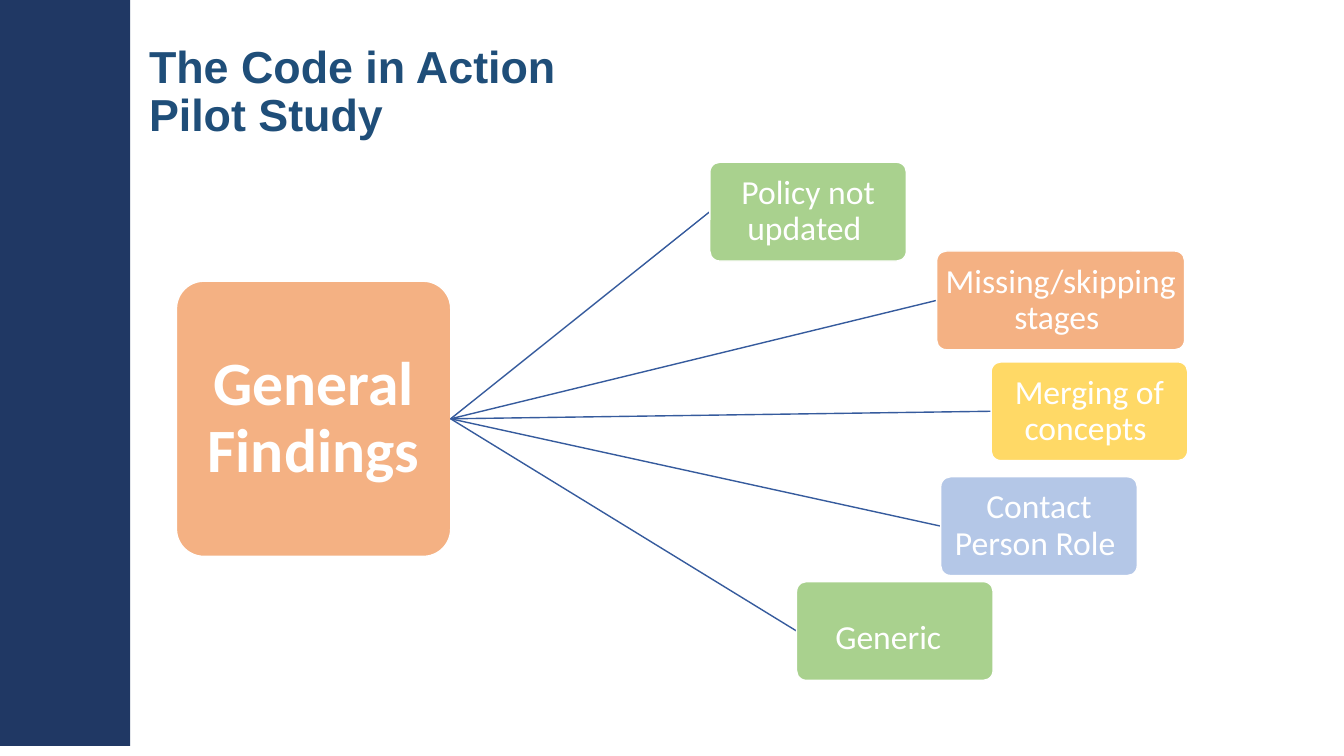
from lxml.etree import SubElement
from pptx import Presentation
from pptx.dml.color import RGBColor
from pptx.enum.shapes import MSO_CONNECTOR, MSO_SHAPE
from pptx.enum.text import MSO_ANCHOR, PP_ALIGN
from pptx.oxml.ns import qn
from pptx.util import Inches, Pt


def tint(code):
    return RGBColor.from_string(code)


class Page:
    navy, ink, line, white = "203864", "1F4E79", "365B9D", "FFFFFF"

    def __init__(self, deck):
        self.slide = deck.slides.add_slide(deck.slide_layouts[6])
        self.shapes = self.slide.shapes

    def add_text(self, part, text, size, font, color, bold=False):
        run = part.add_run()
        run.text = text
        run.font.size = Pt(size)
        run.font.name = font
        run.font.bold = bold
        run.font.color.rgb = tint(color)

    def band(self, *area):
        band = self.shapes.add_shape(MSO_SHAPE.RECTANGLE, *map(Inches, area))
        band.shadow.inherit = False
        band.fill.solid()
        band.fill.fore_color.rgb = tint(self.navy)
        band.line.fill.background()

    def title(self, lines, *area):
        frame = self.shapes.add_textbox(*map(Inches, area)).text_frame
        frame.word_wrap = True
        frame.vertical_anchor = MSO_ANCHOR.MIDDLE
        part = frame.paragraphs[0]
        part.line_spacing = 0.9
        for row, text in enumerate(lines):
            if row:
                part.add_line_break()
            self.add_text(part, text, 32, "Arial", self.ink, True)

    def card(self, runs, fill, area, inset=0.02, bold=False):
        card = self.shapes.add_shape(MSO_SHAPE.ROUNDED_RECTANGLE, *map(Inches, area))
        card.adjustments[0] = 0.1
        card.shadow.inherit = False
        card.fill.solid()
        card.fill.fore_color.rgb = tint(fill)
        card.line.color.rgb = tint(self.white)
        card.line.width = Pt(1)
        frame = card.text_frame
        frame.word_wrap = True
        frame.vertical_anchor = MSO_ANCHOR.MIDDLE
        frame.margin_left = frame.margin_right = Inches(inset)
        frame.margin_top = frame.margin_bottom = Inches(inset)
        part = frame.paragraphs[0]
        part.alignment = PP_ALIGN.CENTER
        part.line_spacing = 0.9
        for text, size in runs:
            self.add_text(part, text, size, "Calibri", self.white, bold)

    def link(self, *ends):
        link = self.shapes.add_connector(MSO_CONNECTOR.STRAIGHT, *map(Inches, ends))
        link.line.color.rgb = tint(self.line)
        link.line.width = Pt(1)
        SubElement(link._element.spPr, qn("a:effectLst"))


def main():
    deck = Presentation()
    deck.slide_width, deck.slide_height = Inches(13.33), Inches(7.5)
    page = Page(deck)
    page.band(-0.02, 0, 1.31, 7.4)
    page.title(["The Code in Action", "Pilot Study"], 1.38, 0.38, 11.5, 1.09)

    left, top, wide, high = root = 1.75, 2.79, 2.72, 2.73
    page.card([("General Findings", 44)], "F4B183", root, 0.03, True)

    tall = 0.98
    for runs, fill, x, y, width in [
        ([("Policy not updated ", 24)], "A9D18E", 7.04, 1.61, 1.95),
        ([("Missing/skipping stages ", 24)], "F4B183", 9.29, 2.49, 2.46),
        ([("Merging of concepts ", 24)], "FFD966", 9.83, 3.59, 1.95),
        ([("Contact Person Role ", 24)], "B4C7E7", 9.33, 4.73, 1.95),
        ([("Generic", 24), (" ", 41)], "A9D18E", 7.9, 5.77, 1.95),
    ]:
        page.link(left + wide, top + high / 2, x, y + tall / 2)
        page.card(runs, fill, (x, y, width, tall))
    deck.save("out.pptx")


if __name__ == "__main__":
    main()
